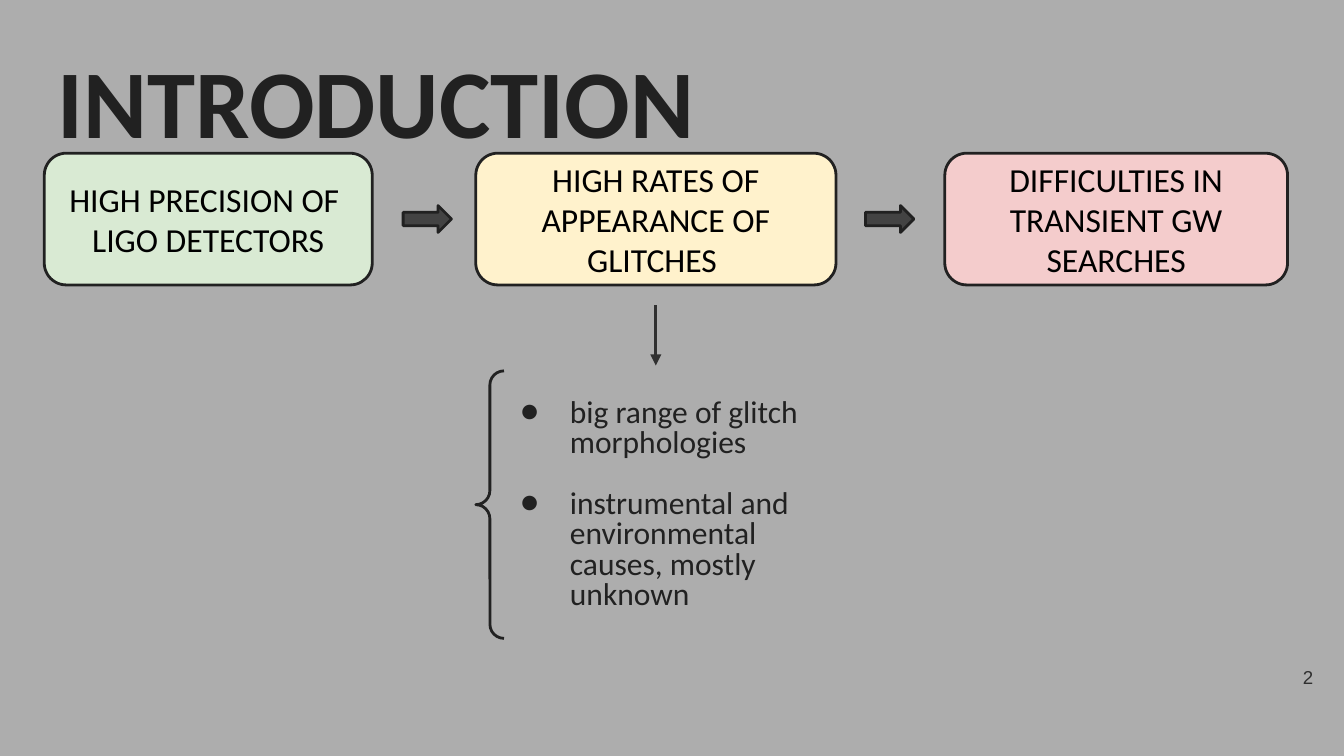
from dataclasses import dataclass

from lxml.etree import SubElement
from pptx import Presentation
from pptx.dml.color import RGBColor
from pptx.enum.shapes import MSO_CONNECTOR, MSO_SHAPE
from pptx.enum.text import MSO_ANCHOR, MSO_AUTO_SIZE, PP_ALIGN
from pptx.oxml.ns import qn
from pptx.shapes.autoshape import Shape
from pptx.slide import Slide
from pptx.text.text import TextFrame, _Paragraph
from pptx.util import Inches, Pt

COLORS = {
    "background": "ADADAD",
    "ink": "212121",
    "gray": "303030",
    "arrow": "434343",
    "text": "000000",
    "green": "D9EAD3",
    "yellow": "FFF2CC",
    "red": "F4CCCC",
}
SLIDE_WIDTH = 10
SLIDE_HEIGHT = SLIDE_WIDTH * 9 / 16
STEP_TOP, STEP_HEIGHT = 1.14, 0.98
ARROW_WIDTH, ARROW_HEIGHT = 0.36, 0.2


@dataclass
class Step:
    left: float
    width: float
    color: str
    lines: list[str]


STEPS = [
    Step(0.33, 2.44, "green", ["HIGH PRECISION OF ", "LIGO DETECTORS"]),
    Step(3.54, 2.68, "yellow", ["HIGH RATES OF APPEARANCE OF GLITCHES "]),
    Step(7.03, 2.55, "red", ["DIFFICULTIES IN TRANSIENT GW SEARCHES"]),
]
ARROW_LEFTS = [3.0, 6.44]
CAUSES = [
    "big range of glitch morphologies",
    "instrumental and environmental causes, mostly unknown",
]


def color(name: str) -> RGBColor:
    return RGBColor.from_string(COLORS[name])


def place(shape: Shape, left: float, top: float, width: float, height: float) -> None:
    shape.left, shape.top = Inches(left), Inches(top)
    shape.width, shape.height = Inches(width), Inches(height)


def prepare_frame(frame: TextFrame, anchor: MSO_ANCHOR) -> None:
    frame.auto_size = MSO_AUTO_SIZE.NONE
    frame.word_wrap = True
    frame.vertical_anchor = anchor
    frame.margin_left = frame.margin_right = Inches(0.1)
    frame.margin_top = frame.margin_bottom = Inches(0.1)


def add_run(paragraph: _Paragraph, text: str, size: float, ink: str,
            font: str = "Calibri", bold: bool = False) -> None:
    run = paragraph.add_run()
    run.text = text
    run.font.name = font
    run.font.size = Pt(size)
    run.font.bold = bold
    run.font.color.rgb = color(ink)


def add_outlined(slide: Slide, kind: MSO_SHAPE, left: float, top: float,
                 width: float, height: float, fill: str | None = None) -> Shape:
    shape = slide.shapes.add_shape(
        kind, Inches(left), Inches(top), Inches(width), Inches(height))
    shape.shadow.inherit = False
    if fill:
        shape.fill.solid()
        shape.fill.fore_color.rgb = color(fill)
    else:
        shape.fill.background()
    shape.line.color.rgb = color("ink")
    shape.line.width = Pt(1.5)
    return shape


def add_step(slide: Slide, step: Step) -> None:
    shape = add_outlined(slide, MSO_SHAPE.ROUNDED_RECTANGLE, step.left, STEP_TOP,
                         step.width, STEP_HEIGHT, step.color)
    frame = shape.text_frame
    prepare_frame(frame, MSO_ANCHOR.MIDDLE)
    for index, line in enumerate(step.lines):
        paragraph = frame.add_paragraph() if index else frame.paragraphs[0]
        paragraph.alignment = PP_ALIGN.CENTER
        add_run(paragraph, line, 18, "text")


def add_down_arrow(slide: Slide, x: float, top: float, bottom: float) -> None:
    connector = slide.shapes.add_connector(
        MSO_CONNECTOR.STRAIGHT, Inches(x), Inches(top), Inches(x), Inches(bottom))
    connector.line.color.rgb = color("gray")
    connector.line.width = Pt(1.5)
    properties = connector.element.spPr
    SubElement(properties.find(qn("a:ln")), qn("a:tailEnd"), type="triangle")
    SubElement(properties, qn("a:effectLst"))


def set_bullet(paragraph: _Paragraph) -> None:
    properties = paragraph._p.get_or_add_pPr()
    properties.set("marL", str(Inches(0.5)))
    properties.set("indent", str(Inches(-0.37)))
    bullet_color = SubElement(properties, qn("a:buClr"))
    SubElement(bullet_color, qn("a:srgbClr"), val=COLORS["ink"])
    SubElement(properties, qn("a:buFont"), typeface="Calibri")
    SubElement(properties, qn("a:buChar"), char="●")


def fill_causes(body: Shape) -> None:
    place(body, 3.64, 2.87, 2.68, 1.79)
    frame = body.text_frame
    prepare_frame(frame, MSO_ANCHOR.TOP)
    for index, cause in enumerate(CAUSES):
        paragraph = frame.add_paragraph() if index else frame.paragraphs[0]
        set_bullet(paragraph)
        paragraph.line_spacing = 0.8
        paragraph.space_before = Pt(16.5 if index else 0)
        paragraph.space_after = Pt(0)
        paragraph.alignment = PP_ALIGN.LEFT
        add_run(paragraph, cause, 16.9, "ink")


def fill_title(title: Shape) -> None:
    place(title, 0.33, 0.21, 9.32, 0.63)
    prepare_frame(title.text_frame, MSO_ANCHOR.TOP)
    paragraph = title.text_frame.paragraphs[0]
    paragraph.alignment = PP_ALIGN.LEFT
    add_run(paragraph, "INTRODUCTION", 52, "ink", bold=True)


def add_page_number(slide: Slide) -> None:
    box = slide.shapes.add_textbox(
        Inches(9.27), Inches(4.82), Inches(0.6), Inches(0.43))
    prepare_frame(box.text_frame, MSO_ANCHOR.MIDDLE)
    paragraph = box.text_frame.paragraphs[0]
    paragraph.alignment = PP_ALIGN.RIGHT
    add_run(paragraph, "2", 10, "gray", font="Arial")


def main() -> None:
    presentation = Presentation()
    presentation.slide_width = Inches(SLIDE_WIDTH)
    presentation.slide_height = Inches(SLIDE_HEIGHT)
    slide = presentation.slides.add_slide(presentation.slide_layouts[1])
    slide.background.fill.solid()
    slide.background.fill.fore_color.rgb = color("background")

    fill_title(slide.shapes.title)
    fill_causes(slide.placeholders[1])
    for step in STEPS:
        add_step(slide, step)
    arrow_top = STEP_TOP + (STEP_HEIGHT - ARROW_HEIGHT) / 2
    for left in ARROW_LEFTS:
        add_outlined(slide, MSO_SHAPE.RIGHT_ARROW, left, arrow_top,
                     ARROW_WIDTH, ARROW_HEIGHT, "arrow")

    glitches = STEPS[1]
    brace = add_outlined(slide, MSO_SHAPE.LEFT_BRACE, glitches.left, 2.76, 0.21, 1.99)
    brace.adjustments[0] = 0.5
    add_down_arrow(slide, glitches.left + glitches.width / 2, 2.27, 2.72)
    add_page_number(slide)
    presentation.save("out.pptx")


if __name__ == "__main__":
    main()
